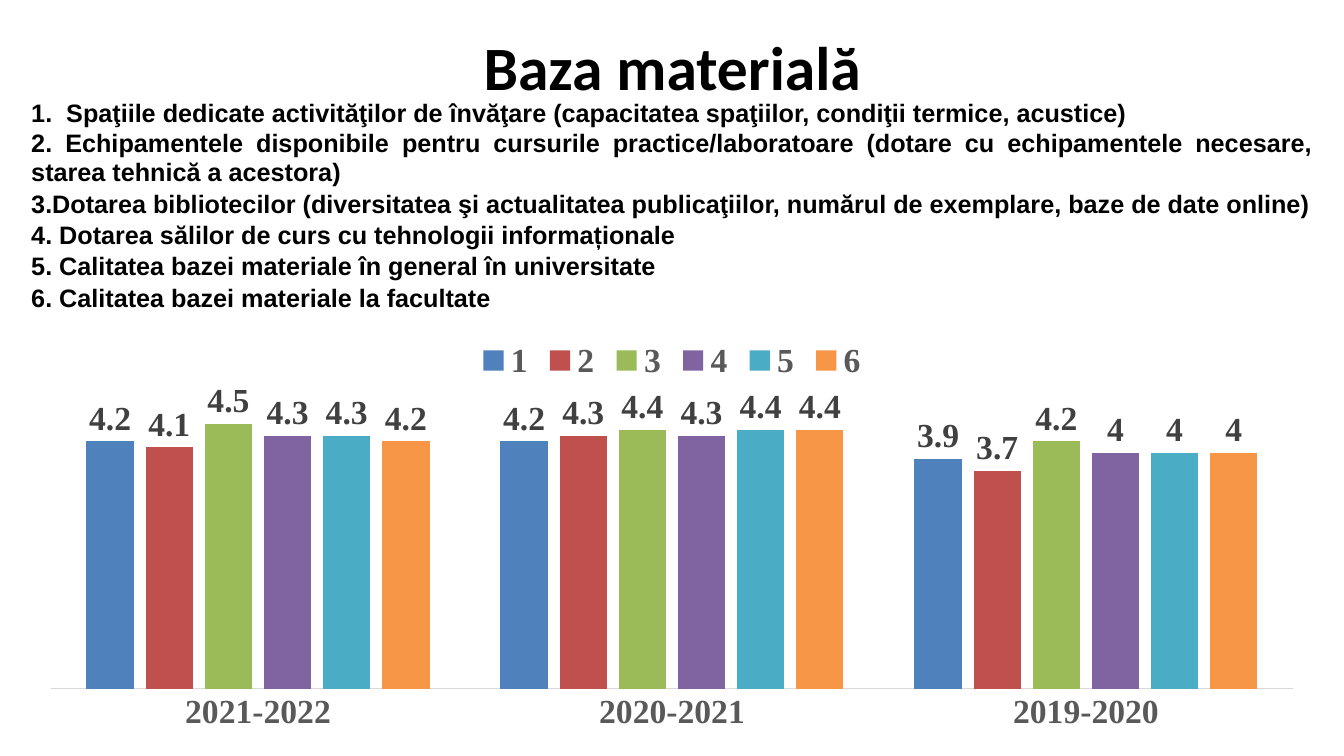
from pptx import Presentation
from pptx.chart.data import CategoryChartData
from pptx.dml.color import RGBColor
from pptx.enum.chart import XL_CHART_TYPE, XL_LABEL_POSITION, XL_LEGEND_POSITION, XL_TICK_MARK
from pptx.enum.text import MSO_ANCHOR, PP_ALIGN
from pptx.util import Inches, Pt

TITLE = "Baza materială"
CRITERIA = [
    "1.  Spaţiile dedicate activităţilor de învăţare (capacitatea spaţiilor, condiţii termice, acustice)",
    "2. Echipamentele disponibile pentru cursurile practice/laboratoare (dotare cu echipamentele necesare, starea tehnică a acestora)",
    "3.Dotarea bibliotecilor (diversitatea şi actualitatea publicaţiilor, numărul de exemplare, baze de date online)",
    "4. Dotarea sălilor de curs cu tehnologii informaționale",
    "5. Calitatea bazei materiale în general în universitate",
    "6. Calitatea bazei materiale la facultate",
]
ROW_HEIGHTS = [0.26, 0.3, 0.31, 0.31, 0.31, 0.31]
YEARS = ["2021-2022", "2020-2021", "2019-2020"]
SCORES = [
    ("1", (4.2, 4.2, 3.9), "4F81BD"),
    ("2", (4.1, 4.3, 3.7), "C0504D"),
    ("3", (4.5, 4.4, 4.2), "9BBB59"),
    ("4", (4.3, 4.3, 4), "8064A2"),
    ("5", (4.3, 4.4, 4), "4BACC6"),
    ("6", (4.2, 4.4, 4), "F79646"),
]
LEFT, WIDTH = Inches(0.25), Inches(12.83)


def fill_solid(fill, color):
    fill.solid()
    fill.fore_color.rgb = RGBColor.from_string(color)


def style_font(font, name, size, color):
    font.name = name
    font.size = Pt(size)
    font.bold = True
    fill_solid(font.fill, color)


def add_title(slide):
    title = slide.shapes.add_textbox(Inches(2.17), Inches(0.3), Inches(9), Inches(0.7))
    frame = title.text_frame
    frame.word_wrap = True
    frame.vertical_anchor = MSO_ANCHOR.MIDDLE
    frame.text = TITLE
    paragraph = frame.paragraphs[0]
    paragraph.alignment = PP_ALIGN.CENTER
    style_font(paragraph.runs[0].font, "Calibri", 44, "000000")


def add_criteria(slide):
    table = slide.shapes.add_table(
        len(CRITERIA), 1, LEFT, Inches(0.99), WIDTH, Inches(sum(ROW_HEIGHTS))
    ).table
    table.horz_banding = False
    for row, height, text in zip(table.rows, ROW_HEIGHTS, CRITERIA):
        row.height = Inches(height)
        cell = row.cells[0]
        cell.margin_left = cell.margin_right = Inches(0.06)
        cell.margin_top = cell.margin_bottom = 0
        fill_solid(cell.fill, "FFFFFF")
        cell.text_frame.text = text
        paragraph = cell.text_frame.paragraphs[0]
        paragraph.alignment = PP_ALIGN.JUSTIFY
        style_font(paragraph.runs[0].font, "Arial", 18, "000000")


def add_scores(slide):
    data = CategoryChartData()
    data.categories = YEARS
    for name, values, _ in SCORES:
        data.add_series(name, values)
    chart = slide.shapes.add_chart(
        XL_CHART_TYPE.COLUMN_CLUSTERED, LEFT, Inches(3.25), WIDTH, Inches(4.08), data
    ).chart
    chart.has_title = False
    style_font(chart.font, "Times New Roman", 24, "000000")

    chart.has_legend = True
    chart.legend.position = XL_LEGEND_POSITION.TOP
    chart.legend.include_in_layout = False
    style_font(chart.legend.font, "Times New Roman", 24, "595959")

    year_axis = chart.category_axis
    year_axis.major_tick_mark = year_axis.minor_tick_mark = XL_TICK_MARK.NONE
    year_axis.format.line.width = Pt(0.75)
    fill_solid(year_axis.format.line.fill, "D9D9D9")
    style_font(year_axis.tick_labels.font, "Times New Roman", 24, "595959")

    score_axis = chart.value_axis
    score_axis.minimum_scale, score_axis.maximum_scale = 0, 5
    score_axis.has_major_gridlines = False
    score_axis.visible = False

    plot = chart.plots[0]
    plot.vary_by_categories = False
    plot.gap_width, plot.overlap = 150, -25
    for series, (_, _, color) in zip(plot.series, SCORES):
        fill_solid(series.format.fill, color)
        labels = series.data_labels
        labels.show_value = True
        labels.position = XL_LABEL_POSITION.OUTSIDE_END
        style_font(labels.font, "Times New Roman", 24, "404040")


def main():
    presentation = Presentation()
    presentation.slide_width, presentation.slide_height = Inches(13.33), Inches(7.5)
    slide = presentation.slides.add_slide(presentation.slide_layouts[6])
    add_title(slide)
    add_criteria(slide)
    add_scores(slide)
    presentation.save("out.pptx")


if __name__ == "__main__":
    main()
